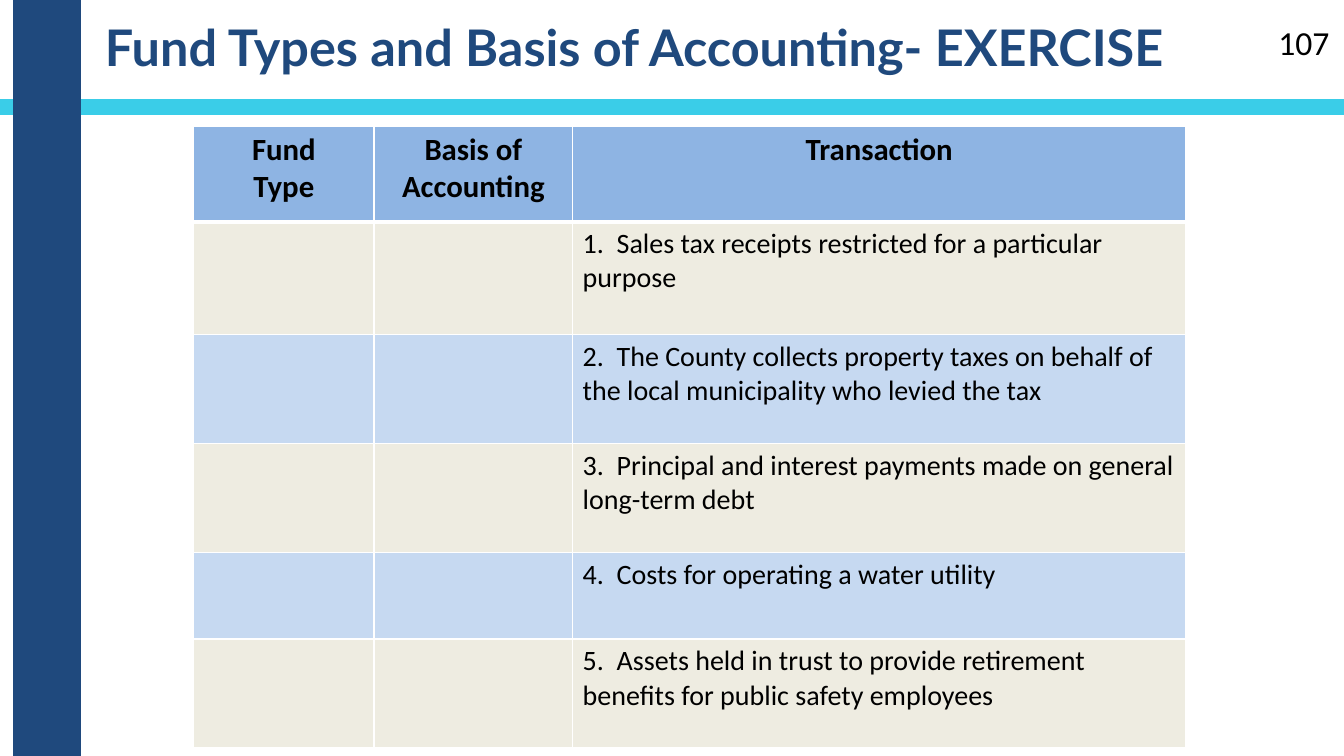
import lxml.etree
import pptx
import pptx.dml.color
import pptx.enum.shapes
import pptx.enum.text
import pptx.oxml.ns
import pptx.util

Inches = pptx.util.Inches
RGBColor = pptx.dml.color.RGBColor
Align = pptx.enum.text.PP_ALIGN
Anchor = pptx.enum.text.MSO_ANCHOR

TITLE = "Fund Types and Basis of Accounting- EXERCISE"
PAGE_NUMBER = "107"
HEADERS = ["Fund\nType", "Basis of Accounting", "Transaction"]
TRANSACTIONS = [
    "1.  Sales tax receipts restricted for a particular purpose",
    "2.  The County collects property taxes on behalf of  the local municipality who levied the tax",
    "3.  Principal and interest payments made on general long-term debt",
    "4.  Costs for operating a water utility",
    "5.  Assets held in trust to provide retirement benefits for public safety employees",
]

WIDTH, HEIGHT = 13.33, 7.5
TABLE_LEFT, TABLE_TOP = 1.92, 1.25
COLUMNS = [1.79, 1.97, 6.08]
ROWS = [0.95, 1.12, 1.08, 1.08, 0.86, 1.08]

NAVY = RGBColor(0x1F, 0x49, 0x7D)
CYAN = RGBColor(0x3A, 0xCD, 0xE8)
BLACK = RGBColor(0, 0, 0)
WHITE = RGBColor(0xFF, 0xFF, 0xFF)
HEADER_BLUE = RGBColor(0x8E, 0xB4, 0xE3)
BANDS = [RGBColor(0xEE, 0xEC, 0xE1), RGBColor(0xC6, 0xD9, 0xF1)]


def write(frame, text, size, font="Calibri", color=BLACK, bold=False, align=Align.LEFT):
    frame.word_wrap = True
    frame.text = text
    for para in frame.paragraphs:
        para.alignment = align
        para.font.size = pptx.util.Pt(size)
        para.font.name = font
        para.font.bold = bold
        para.font.color.rgb = color


def add_bar(page, color, left, top, width, height):
    bar = page.shapes.add_shape(
        pptx.enum.shapes.MSO_SHAPE.RECTANGLE,
        Inches(left), Inches(top), Inches(width), Inches(height))
    bar.shadow.inherit = False
    bar.fill.solid()
    bar.fill.fore_color.rgb = color
    bar.line.color.rgb = color
    bar.line.width = pptx.util.Pt(2)


def add_borders(cell, **widths):
    """Draw white cell borders; the keys are the sides L, R, T and B, in points."""
    properties = cell._tc.get_or_add_tcPr()
    for side, points in widths.items():
        line = lxml.etree.SubElement(
            properties, pptx.oxml.ns.qn("a:ln" + side), w=str(pptx.util.Pt(points)))
        fill = lxml.etree.SubElement(line, pptx.oxml.ns.qn("a:solidFill"))
        lxml.etree.SubElement(fill, pptx.oxml.ns.qn("a:srgbClr"), val=str(WHITE))


def add_exercise_table(page):
    table = page.shapes.add_table(
        len(ROWS), len(COLUMNS), Inches(TABLE_LEFT), Inches(TABLE_TOP),
        Inches(sum(COLUMNS)), Inches(sum(ROWS))).table
    for column, width in zip(table.columns, COLUMNS):
        column.width = Inches(width)
    lines = [HEADERS] + [["", "", transaction] for transaction in TRANSACTIONS]
    for r, (row, height, texts) in enumerate(zip(table.rows, ROWS, lines)):
        row.height = Inches(height)
        is_header = r == 0
        for cell, text in zip(row.cells, texts):
            add_borders(cell, L=1, R=1, T=3 if r == 1 else 1, B=3 if is_header else 1)
            cell.fill.solid()
            cell.fill.fore_color.rgb = HEADER_BLUE if is_header else BANDS[(r - 1) % 2]
            write(cell.text_frame, text, 22 if is_header else 20, bold=is_header,
                  align=Align.CENTER if is_header else Align.LEFT)


def main():
    deck = pptx.Presentation()
    deck.slide_width, deck.slide_height = Inches(WIDTH), Inches(HEIGHT)
    page = deck.slides.add_slide(deck.slide_layouts[5])

    add_bar(page, CYAN, 0, 1, WIDTH, 0.13)
    add_bar(page, NAVY, 0.14, 0, 0.65, HEIGHT)

    title = page.shapes.title
    title.left, title.top = Inches(0.94), Inches(0)
    title.width, title.height = Inches(12.25), Inches(0.92)
    write(title.text_frame, TITLE, 36, font="Lato", color=NAVY, bold=True)
    title.text_frame.vertical_anchor = Anchor.MIDDLE

    number = page.shapes.add_textbox(Inches(12.58), Inches(0.17), Inches(0.75), Inches(0.4))
    write(number.text_frame, PAGE_NUMBER, 24)

    add_exercise_table(page)
    deck.save("out.pptx")


if __name__ == "__main__":
    main()
